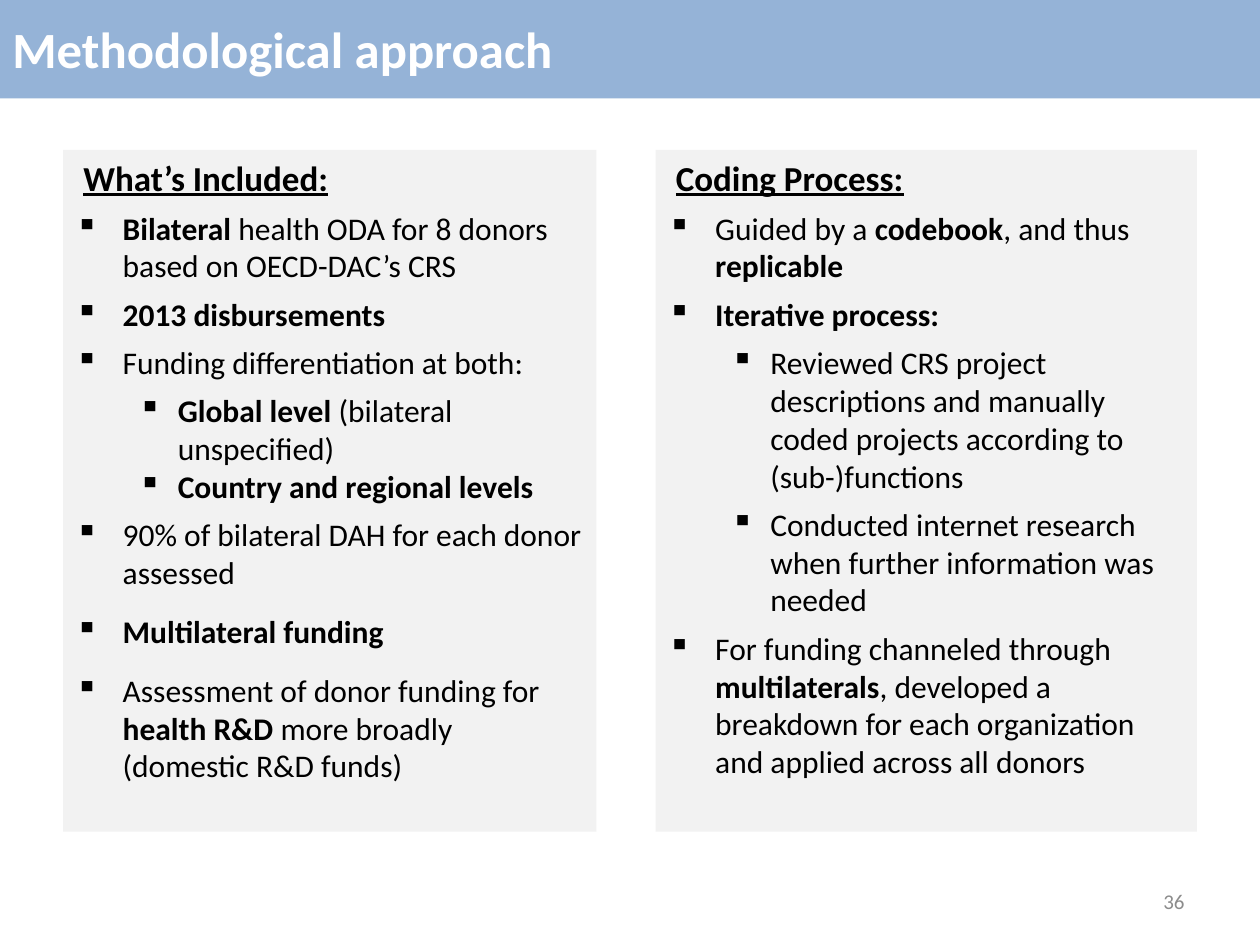
from lxml.etree import SubElement
from pptx import Presentation
from pptx.dml.color import RGBColor
from pptx.enum.shapes import MSO_SHAPE
from pptx.enum.text import MSO_ANCHOR, PP_ALIGN
from pptx.oxml.ns import qn
from pptx.util import Pt

BLUE = RGBColor(0x95, 0xB3, 0xD7)
PALE = RGBColor(0xF2, 0xF2, 0xF2)
WHITE = RGBColor(0xFF, 0xFF, 0xFF)
BLACK = RGBColor(0, 0, 0)
GRAY = RGBColor(0x8C, 0x8C, 0x8C)

FONT = "Calibri"
BOLD_MARK = "**"
PANEL_TOP, PANEL_HEIGHT = 85.7, 389.5
LEVEL_INDENTS = [(27, -27), (58.5, -22.5)]

# Each point: level, space before, space after, text with bold parts marked
INCLUDED = [
    (0, 0, 6, "**Bilateral **health ODA for 8 donors based on OECD-DAC’s CRS"),
    (0, 0, 6, "**2013 disbursements**"),
    (0, 0, 6, "Funding differentiation at both:"),
    (1, 0, 0, "**Global level **(bilateral unspecified)"),
    (1, 0, 0, "**Country and regional levels**"),
    (0, 6, 6, "90% of bilateral DAH for each donor assessed"),
    (0, 6, 6, "**Multilateral funding**"),
    (0, 6, 6, "Assessment of donor funding for **health R&D **more broadly (domestic R&D funds)"),
]
CODING = [
    (0, 0, 6, "Guided by a **codebook**, and thus **replicable**"),
    (0, 0, 6, "**Iterative process:**"),
    (1, 0, 6, "Reviewed CRS project descriptions and manually coded projects according to (sub-)functions"),
    (1, 0, 6, "Conducted internet research when further information was needed"),
    (0, 0, 6, "For funding channeled through **multilaterals**, developed a breakdown "
              "for each organization and applied across all donors"),
]


def add_run(paragraph, text, size, color, bold=False, underline=False):
    run = paragraph.add_run()
    run.text = text
    run.font.name = FONT
    run.font.size = Pt(size)
    run.font.bold = bold
    run.font.underline = underline
    run.font.color.rgb = color


def add_block(slide, left, top, width, height, fill, anchor):
    block = slide.shapes.add_shape(
        MSO_SHAPE.RECTANGLE, Pt(left), Pt(top), Pt(width), Pt(height))
    block.shadow.inherit = False
    block.fill.solid()
    block.fill.fore_color.rgb = fill
    block.line.fill.background()
    frame = block.text_frame
    frame.word_wrap = True
    frame.vertical_anchor = anchor
    frame.paragraphs[0].alignment = PP_ALIGN.LEFT
    return frame


def add_point(frame, level, before, after, marked_text):
    point = frame.add_paragraph()
    point.level = level
    point.alignment = PP_ALIGN.LEFT
    point.space_before, point.space_after = Pt(before), Pt(after)
    properties = point._p.get_or_add_pPr()
    margin, indent = LEVEL_INDENTS[level]
    properties.set("marL", str(Pt(margin)))
    properties.set("indent", str(Pt(indent)))
    SubElement(properties, qn("a:buChar"), char="▪")
    for position, text in enumerate(marked_text.split(BOLD_MARK)):
        if text:
            add_run(point, text, 18, BLACK, bold=position % 2 == 1)


def add_panel(slide, left, width, heading, points):
    frame = add_block(slide, left, PANEL_TOP, width, PANEL_HEIGHT, PALE, MSO_ANCHOR.TOP)
    opening = frame.paragraphs[0]
    opening.space_after = Pt(6)
    opening._p.get_or_add_pPr().set("marL", str(Pt(4.5)))
    add_run(opening, heading, 20, BLACK, bold=True, underline=True)
    for point in points:
        add_point(frame, *point)


def add_page_number(slide, number):
    frame = slide.shapes.add_textbox(Pt(516), Pt(500.5), Pt(168), Pt(28.75)).text_frame
    frame.word_wrap = True
    frame.vertical_anchor = MSO_ANCHOR.MIDDLE
    frame.paragraphs[0].alignment = PP_ALIGN.RIGHT
    add_run(frame.paragraphs[0], number, 12, GRAY)


def main():
    deck = Presentation()
    deck.slide_width, deck.slide_height = Pt(720), Pt(540)
    slide = deck.slides.add_slide(deck.slide_layouts[6])
    title = add_block(slide, 0, -0.7, 720, 57, BLUE, MSO_ANCHOR.MIDDLE)
    add_run(title.paragraphs[0], "Methodological approach", 29, WHITE, bold=True)
    add_panel(slide, 36, 304.8, "What’s Included:", INCLUDED)
    add_panel(slide, 374.6, 309.4, "Coding Process:", CODING)
    add_page_number(slide, "36")
    deck.save("out.pptx")


if __name__ == "__main__":
    main()
